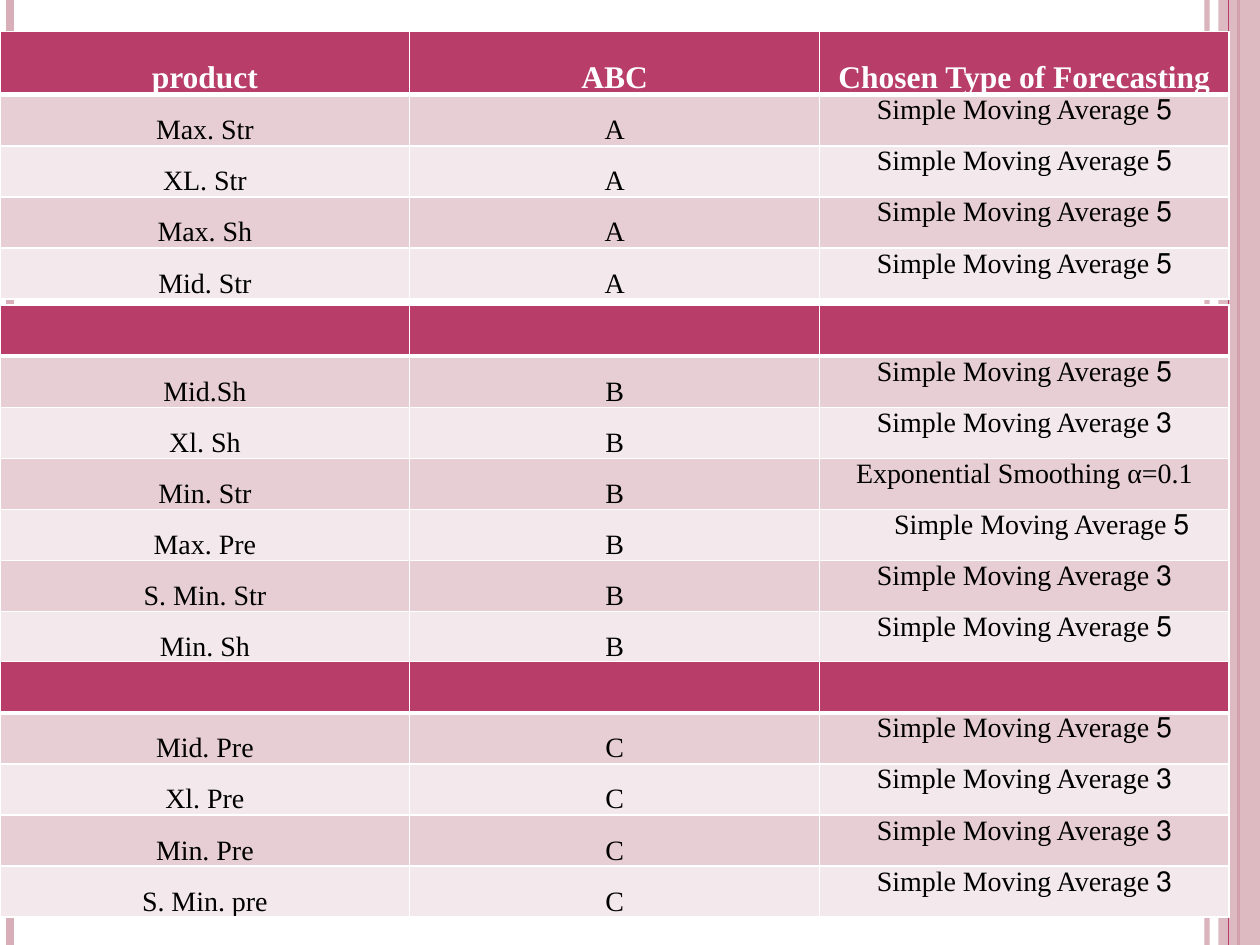
from dataclasses import dataclass
from typing import Optional

from lxml import etree
from pptx import Presentation
from pptx.dml.color import RGBColor
from pptx.enum.shapes import MSO_CONNECTOR, MSO_SHAPE
from pptx.enum.text import MSO_ANCHOR, PP_ALIGN
from pptx.oxml.ns import qn
from pptx.util import Cm, Pt

STRAIGHT = MSO_CONNECTOR.STRAIGHT
RECTANGLE = MSO_SHAPE.RECTANGLE
CENTER = PP_ALIGN.CENTER
TOP, BOTTOM = MSO_ANCHOR.TOP, MSO_ANCHOR.BOTTOM

COLORS = {
    "accent": "B83D68",
    "pale": "D8AFB9",
    "band_dark": "E6CED4",
    "band_light": "F3E8EB",
    "white": "FFFFFF",
    "black": "000000",
}
FONT = "Times New Roman"
SLIDE_WIDTH, SLIDE_HEIGHT = 25.4, 19.05
COLUMN_WIDTH, ROW_HEIGHT = 8.26, 1.03
CELL_MARGIN = 0.18
THIN_BORDER, THICK_BORDER = 1, 3
SMA_3 = "3 Simple Moving Average"
SMA_5 = "5 Simple Moving Average"


@dataclass
class Stripe:
    x: float
    color: str
    width: float
    opacity: Optional[int] = None


@dataclass
class Product:
    name: str
    method: str
    extra_margin: float = 0


@dataclass
class Category:
    grade: str
    top: float
    header_height: float
    headings: tuple[str, str, str]
    products: list[Product]


LOWER_STRIPES = [
    Stripe(24.33, "pale", 3, 93),
    Stripe(0.2, "pale", 4.5),
    Stripe(24.97, "accent", 1.5),
]
UPPER_STRIPE = Stripe(24.77, "accent", 0.75)

NO_HEADINGS = ("", "", "")
CATEGORIES = [
    Category("A", 0.64, 1.27, ("product", "ABC", "Chosen Type of Forecasting"), [
        Product("Max. Str", SMA_5),
        Product("XL. Str", SMA_5),
        Product("Max. Sh", SMA_5),
        Product("Mid. Str", SMA_5),
    ]),
    Category("B", 6.15, ROW_HEIGHT, NO_HEADINGS, [
        Product("Mid.Sh", SMA_5),
        Product("Xl. Sh", SMA_3),
        Product("Min. Str", "Exponential Smoothing α=0.1"),
        Product("Max. Pre", SMA_5, extra_margin=0.7),
        Product("S. Min. Str", SMA_3),
        Product("Min. Sh", SMA_5),
    ]),
    Category("C", 13.34, ROW_HEIGHT, NO_HEADINGS, [
        Product("Mid. Pre", SMA_5),
        Product("Xl. Pre", SMA_3),
        Product("Min. Pre", SMA_3),
        Product("S. Min. pre", SMA_3),
    ]),
]


def color(name: str) -> RGBColor:
    return RGBColor.from_string(COLORS[name])


def set_opacity(element, percent: int) -> None:
    rgb = element.find(".//" + qn("a:srgbClr"))
    etree.SubElement(rgb, qn("a:alpha"), val=str(percent * 1000))


def draw_stripe(slide, stripe: Stripe) -> None:
    connector = slide.shapes.add_connector(
        STRAIGHT, Cm(stripe.x), Cm(0), Cm(stripe.x), Cm(SLIDE_HEIGHT))
    connector.line.color.rgb = color(stripe.color)
    connector.line.width = Pt(stripe.width)
    properties = connector._element.spPr
    if stripe.opacity:
        set_opacity(properties, stripe.opacity)
    etree.SubElement(properties, qn("a:effectLst"))


def draw_side_band(slide) -> None:
    left = 24.56
    shape = slide.shapes.add_shape(
        RECTANGLE, Cm(left), Cm(0), Cm(SLIDE_WIDTH - left), Cm(SLIDE_HEIGHT))
    shape.shadow.inherit = False
    shape.fill.solid()
    shape.fill.fore_color.rgb = color("pale")
    set_opacity(shape._element.spPr, 87)
    shape.line.fill.background()


def format_cell(cell, fill: str, top: float, bottom: float) -> None:
    # Borders come before the fill in the cell properties
    properties = cell._tc.get_or_add_tcPr()
    borders = {"L": THIN_BORDER, "R": THIN_BORDER, "T": top, "B": bottom}
    for side, width in borders.items():
        line = etree.SubElement(properties, qn(f"a:ln{side}"), w=str(Pt(width)))
        solid = etree.SubElement(line, qn("a:solidFill"))
        etree.SubElement(solid, qn("a:srgbClr"), val=COLORS["white"])
    cell.fill.solid()
    cell.fill.fore_color.rgb = color(fill)
    cell.margin_left = cell.margin_right = Cm(CELL_MARGIN)
    cell.margin_top = cell.margin_bottom = 0


def write_cell(cell, text: str, size: float, text_color: str,
               bold: bool = False, right_to_left: bool = False) -> None:
    cell.vertical_anchor = TOP if right_to_left else BOTTOM
    paragraph = cell.text_frame.paragraphs[0]
    paragraph.alignment = CENTER
    if right_to_left:
        paragraph._p.get_or_add_pPr().set("rtl", "1")
    else:
        paragraph.line_spacing = 1.15
    if not text:
        return
    run = paragraph.add_run()
    run.text = text
    run.font.name = FONT
    run.font.size = Pt(size)
    run.font.bold = bold
    run.font.color.rgb = color(text_color)


def draw_category(slide, category: Category) -> None:
    count = len(category.products)
    height = category.header_height + count * ROW_HEIGHT
    table = slide.shapes.add_table(
        count + 1, 3, Cm(0), Cm(category.top),
        Cm(3 * COLUMN_WIDTH), Cm(height)).table
    for column in table.columns:
        column.width = Cm(COLUMN_WIDTH)
    for row in table.rows:
        row.height = Cm(ROW_HEIGHT)
    table.rows[0].height = Cm(category.header_height)

    # Header row
    for index, heading in enumerate(category.headings):
        cell = table.cell(0, index)
        format_cell(cell, "accent", THIN_BORDER, THICK_BORDER)
        write_cell(cell, heading, 18, "white", bold=True)

    # Product rows
    for number, product in enumerate(category.products, start=1):
        fill = "band_dark" if number % 2 else "band_light"
        top = THICK_BORDER if number == 1 else THIN_BORDER
        texts = (product.name, category.grade, product.method)
        for index, text in enumerate(texts):
            cell = table.cell(number, index)
            format_cell(cell, fill, top, THIN_BORDER)
            write_cell(cell, text, 16, "black", right_to_left=index == 2)
        table.cell(number, 2).margin_left = Cm(CELL_MARGIN + product.extra_margin)


def main() -> None:
    presentation = Presentation()
    presentation.slide_width = Cm(SLIDE_WIDTH)
    presentation.slide_height = Cm(SLIDE_HEIGHT)
    slide = presentation.slides.add_slide(presentation.slide_layouts[6])

    # Vertical decoration
    for stripe in LOWER_STRIPES:
        draw_stripe(slide, stripe)
    draw_side_band(slide)
    draw_stripe(slide, UPPER_STRIPE)

    # One table for each ABC category
    for category in CATEGORIES:
        draw_category(slide, category)

    presentation.save("out.pptx")


if __name__ == "__main__":
    main()
